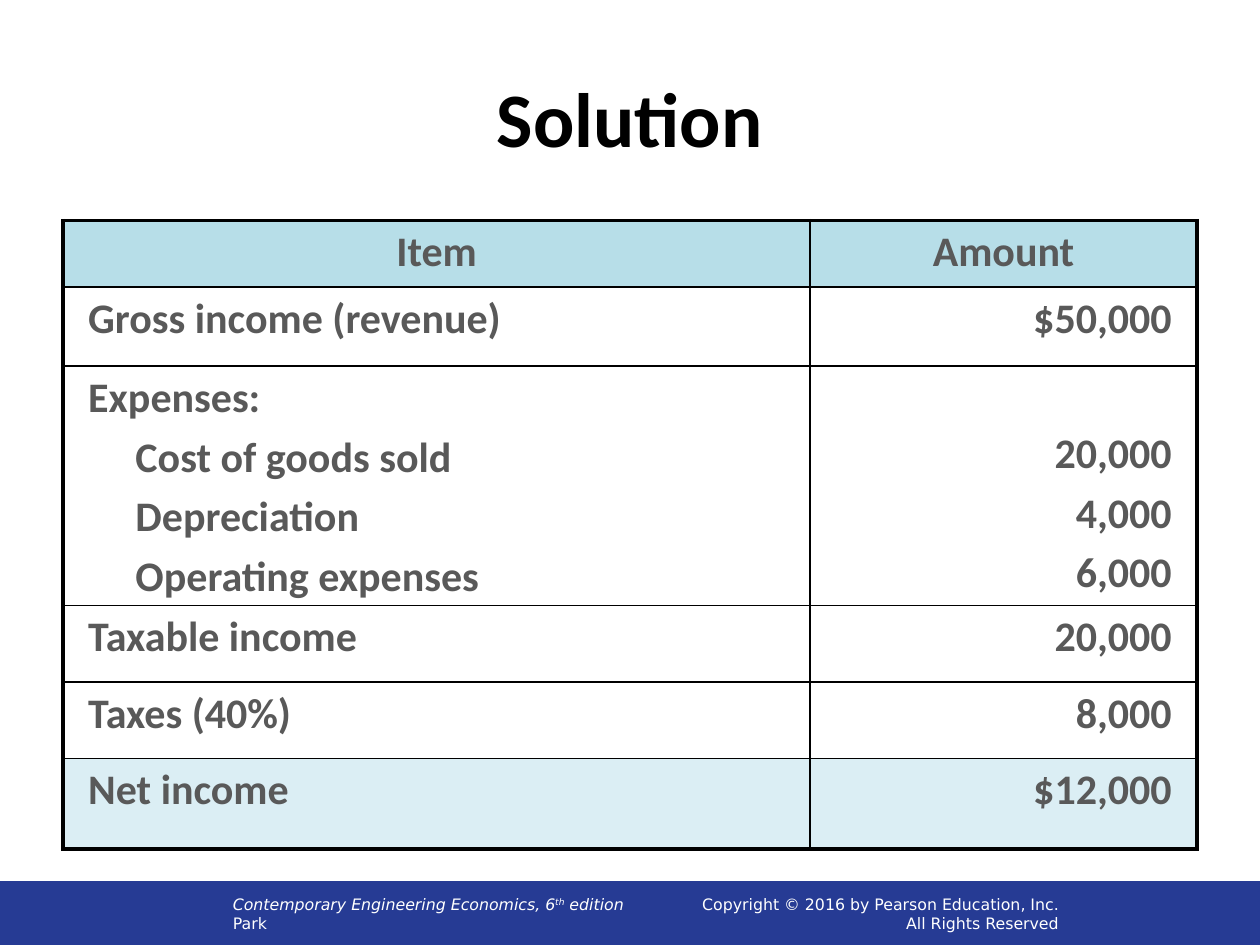
from lxml import etree
from pptx import Presentation
from pptx.dml.color import RGBColor
from pptx.enum.shapes import MSO_SHAPE
from pptx.enum.text import MSO_ANCHOR, PP_ALIGN
from pptx.oxml.ns import qn
from pptx.util import Pt

RECTANGLE = MSO_SHAPE.RECTANGLE
MIDDLE, BOTTOM = MSO_ANCHOR.MIDDLE, MSO_ANCHOR.BOTTOM
LEFT, CENTER, RIGHT = PP_ALIGN.LEFT, PP_ALIGN.CENTER, PP_ALIGN.RIGHT
TITLE_ONLY = 5


def style_font(font, name, size, color, bold=False, italic=False):
    font.name, font.size = name, Pt(size)
    font.bold, font.italic = bold, italic
    font.color.rgb = RGBColor.from_string(color)


def add_border(cell, side, width):
    properties = cell._tc.get_or_add_tcPr()
    line = etree.SubElement(properties, qn(f"a:ln{side}"), w=str(Pt(width)))
    fill = etree.SubElement(line, qn("a:solidFill"))
    etree.SubElement(fill, qn("a:srgbClr"), val="000000")


deck = Presentation()
deck.slide_width, deck.slide_height = Pt(720), Pt(540)
page = deck.slides.add_slide(deck.slide_layouts[TITLE_ONLY])

# Footer band
band = page.shapes.add_shape(RECTANGLE, Pt(0), Pt(504), Pt(720), Pt(36))
band.shadow.inherit = False
band.fill.solid()
band.fill.fore_color.rgb = RGBColor.from_string("263B94")
band.line.color.rgb = RGBColor.from_string("263B94")
band.line.width = Pt(0.75)

# Footer texts: each line is a list of (text, italic, baseline) runs
footers = [
    (126, 443.5, LEFT, [
        [("Contemporary Engineering Economics, 6", True, None),
         ("th", True, "30000"), (" edition", True, None)],
        [("Park", False, None)]]),
    (354.25, 257.75, RIGHT, [
        [("Copyright © 2016 by Pearson Education, Inc.", False, None)],
        [("All Rights Reserved", False, None)]]),
]
for left, width, align, lines in footers:
    box = page.shapes.add_textbox(Pt(left), Pt(504), Pt(width), Pt(36))
    frame = box.text_frame
    frame.word_wrap = True
    frame.vertical_anchor = MIDDLE
    for index, line in enumerate(lines):
        para = frame.add_paragraph() if index else frame.paragraphs[0]
        para.alignment = align
        for text, italic, baseline in line:
            span = para.add_run()
            span.text = text
            style_font(span.font, "DejaVu Sans", 9, "FFFFFF", italic=italic)
            if baseline:
                span.font._element.set("baseline", baseline)

# Title
title = page.shapes.title
title.left, title.top, title.width, title.height = Pt(36), Pt(21.6), Pt(648), Pt(90)
title.text_frame.text = "Solution"
title.text_frame.vertical_anchor = MIDDLE
para = title.text_frame.paragraphs[0]
para.alignment = CENTER
style_font(para.runs[0].font, "Calibri", 44, "000000", bold=True)

# Income statement: label, amount, row height, fill
rows = [
    ("Item", "Amount", 38, "B7DEE8"),
    ("Gross income (revenue)", "$50,000", 45.3, None),
    ("Expenses:\nCost of goods sold\nDepreciation\nOperating expenses",
     "20,000\n4,000\n6,000", 134.6, None),
    ("Taxable income", "20,000", 43.6, None),
    ("Taxes (40%)", "8,000", 43.9, None),
    ("Net income", "$12,000", 51.6, "DBEEF4"),
]
column_widths = [427, 221]
last_row, last_column = len(rows) - 1, len(column_widths) - 1
table = page.shapes.add_table(
    len(rows), len(column_widths), Pt(36), Pt(126), Pt(648), Pt(357)).table
table.first_row = table.horz_banding = False
for column, width in zip(table.columns, column_widths):
    column.width = Pt(width)

for r, (label, amount, height, fill) in enumerate(rows):
    table.rows[r].height = Pt(height)
    for c, text in enumerate((label, amount)):
        cell = table.cell(r, c)
        cell.margin_left = cell.margin_right = Pt(14.4)
        cell.margin_top = cell.margin_bottom = Pt(3.6)

        # Outer edges are heavier than the inner ones; borders precede the fill
        for side, outer in (("L", c == 0), ("R", c == last_column),
                            ("T", r == 0), ("B", r == last_row)):
            add_border(cell, side, 2.25 if outer else 1)
        if fill:
            cell.fill.solid()
            cell.fill.fore_color.rgb = RGBColor.from_string(fill)
        else:
            cell.fill.background()

        cell.text_frame.text = text
        if "\n" in amount and c == last_column:
            cell.vertical_anchor = BOTTOM  # amounts line up with the sub-items
        for index, para in enumerate(cell.text_frame.paragraphs):
            para.alignment = CENTER if r == 0 else (LEFT, RIGHT)[c]
            if index:
                para.space_before = Pt(4.8)
                if c == 0:
                    para._p.get_or_add_pPr().set("marL", str(Pt(27)))
            style_font(para.runs[0].font, "Calibri", 24, "595959", bold=True)

deck.save("out.pptx")
